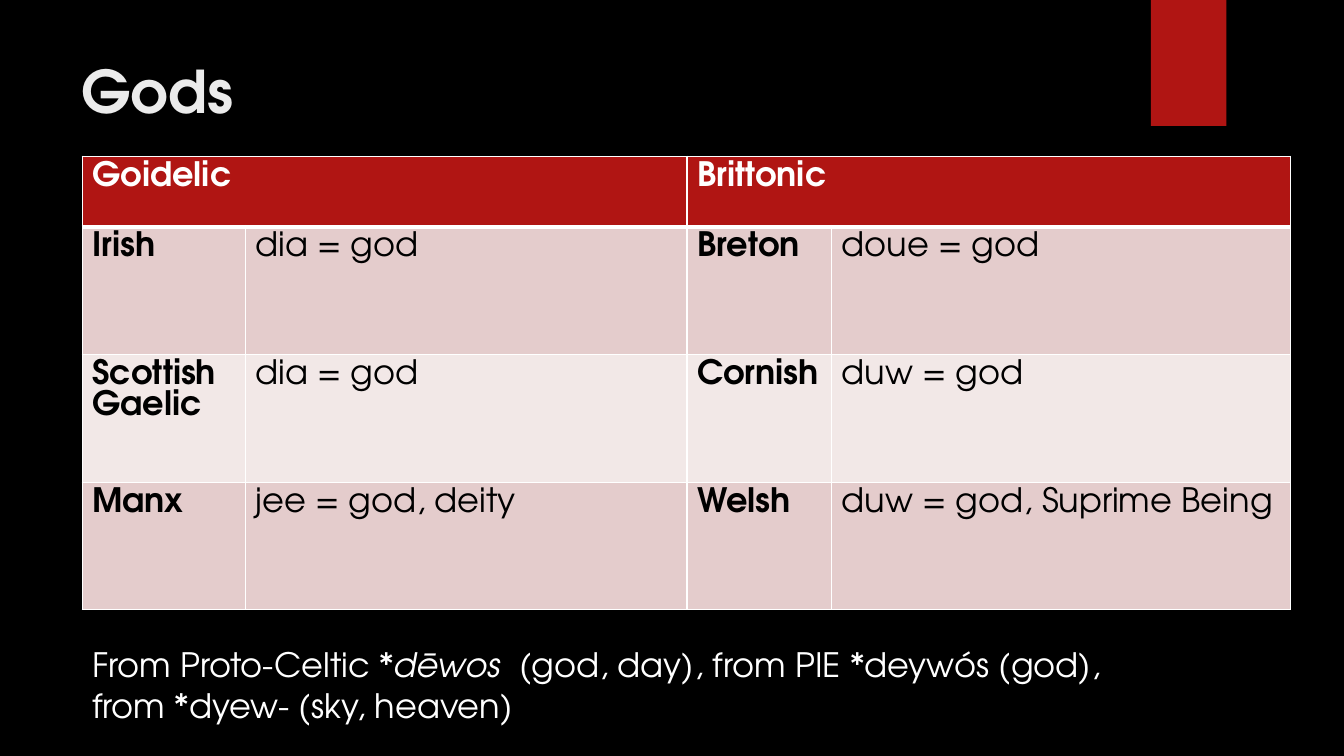
import pptx
import pptx.dml.color
import pptx.enum.shapes
import pptx.enum.text
import pptx.oxml
import pptx.oxml.ns
import pptx.util

COLORS = {
    "black": "000000",
    "white": "FFFFFF",
    "title": "EBEBEB",
    "red": "B01513",
    "rose": "E4CCCC",
    "pale": "F2E8E7",
}
FONT = "TeX Gyre Adventor"
BODY_SIZE = 24
COLUMNS, ROWS = 16, 9
THIN, THICK = 1, 3


def rgb(name):
    return pptx.dml.color.RGBColor.from_string(COLORS[name])


class SlideBuilder:
    """Places elements on a grid of 16 columns by 9 rows."""

    def __init__(self, deck):
        self.column = deck.slide_width / COLUMNS
        self.row = deck.slide_height / ROWS
        self.page = deck.slides.add_slide(deck.slide_layouts[6])

    def across(self, columns):
        return round(columns * self.column)

    def down(self, rows):
        return round(rows * self.row)

    def place(self, left, top, width, height):
        return self.across(left), self.down(top), self.across(width), self.down(height)

    def background(self, color):
        fill = self.page.background.fill
        fill.solid()
        fill.fore_color.rgb = rgb(color)

    def rectangle(self, area, color):
        kind = pptx.enum.shapes.MSO_SHAPE.RECTANGLE
        box = self.page.shapes.add_shape(kind, *self.place(*area))
        box.shadow.inherit = False
        box.fill.solid()
        box.fill.fore_color.rgb = rgb(color)
        box.line.fill.background()

    def span(self, para, text, color, size=BODY_SIZE, bold=False, italic=False, spacing=0):
        span = para.add_run()
        span.text = text
        font = span.font
        font.name, font.size = FONT, pptx.util.Pt(size)
        font.bold, font.italic = bold, italic
        font.color.rgb = rgb(color)
        if spacing:
            font._element.set("spc", str(spacing * 100))

    def text(self, area, lines, anchor=pptx.enum.text.MSO_ANCHOR.TOP):
        """Each line is a list of (text, style) runs."""
        box = self.page.shapes.add_textbox(*self.place(*area))
        frame = box.text_frame
        frame.word_wrap = True
        frame.vertical_anchor = anchor
        for index, line in enumerate(lines):
            para = frame.add_paragraph() if index else frame.paragraphs[0]
            for text, style in line:
                self.span(para, text, **style)

    def border(self, cell, side, width):
        line = pptx.oxml.parse_xml(
            f'<a:{side} {pptx.oxml.ns.nsdecls("a")} w="{pptx.util.Pt(width)}">'
            f'<a:solidFill><a:srgbClr val="{COLORS["white"]}"/></a:solidFill></a:{side}>'
        )
        cell._tc.get_or_add_tcPr().append(line)

    def cell(self, cell, text, fill, color, bold, above=THIN, below=THIN):
        for side, width in (("lnL", THIN), ("lnR", THIN), ("lnT", above), ("lnB", below)):
            self.border(cell, side, width)
        cell.fill.solid()
        cell.fill.fore_color.rgb = rgb(fill)
        if text:
            self.span(cell.text_frame.paragraphs[0], text, color, bold=bold)

    def table(self, left, top, widths, heights, headings, entries):
        area = self.place(left, top, sum(widths), sum(heights))
        table = self.page.shapes.add_table(len(heights), len(widths), *area).table
        for column, width in zip(table.columns, widths):
            column.width = self.across(width)
        for row, height in zip(table.rows, heights):
            row.height = self.down(height)

        # Each heading covers a language column and a word column
        for index, heading in enumerate(headings):
            first, second = table.cell(0, 2 * index), table.cell(0, 2 * index + 1)
            first.merge(second)
            for cell, text in ((first, heading), (second, "")):
                self.cell(cell, text, "red", "white", True, below=THICK)

        # Banded rows, language names in bold
        for row, entry in enumerate(entries, start=1):
            fill = "rose" if row % 2 else "pale"
            above = THICK if row == 1 else THIN
            for column, text in enumerate(entry):
                bold = column % 2 == 0
                self.cell(table.cell(row, column), text, fill, "black", bold, above)


def main():
    deck = pptx.Presentation()
    deck.slide_width = pptx.util.Inches(13.33)
    deck.slide_height = pptx.util.Inches(7.5)
    slide = SlideBuilder(deck)

    # Background and red tab
    slide.background("black")
    slide.rectangle((13.7, 0, 0.9, 1.5), "red")

    # Title
    title = {"color": "title", "size": 42, "bold": True}
    slide.text((0.85, 0.6, 12.35, 0.94), [[("Gods", title)]],
               pptx.enum.text.MSO_ANCHOR.MIDDLE)

    # Words for god in the two branches
    slide.table(
        0.98, 1.86,
        widths=[1.94, 5.26, 1.72, 5.46],
        heights=[0.84] + [1.52] * 3,
        headings=["Goidelic", "Brittonic"],
        entries=[
            ["Irish", "dia = god", "Breton", "doue = god"],
            ["Scottish Gaelic", "dia = god", "Cornish", "duw = god"],
            ["Manx", "jee = god, deity", "Welsh", "duw = god, Suprime Being"],
        ],
    )

    # Etymology, with a wider gap after the italic word
    plain = {"color": "white"}
    slide.text((0.98, 7.61, 14.38, 1.09), [
        [
            ("From Proto-Celtic ", plain),
            ("*dēwos", {**plain, "italic": True}),
            (" ", {**plain, "spacing": 7}),
            ("(god, day), from PIE *deywós (god),", plain),
        ],
        [("from *dyew- (sky, heaven)", plain)],
    ])

    deck.save("out.pptx")


if __name__ == "__main__":
    main()
